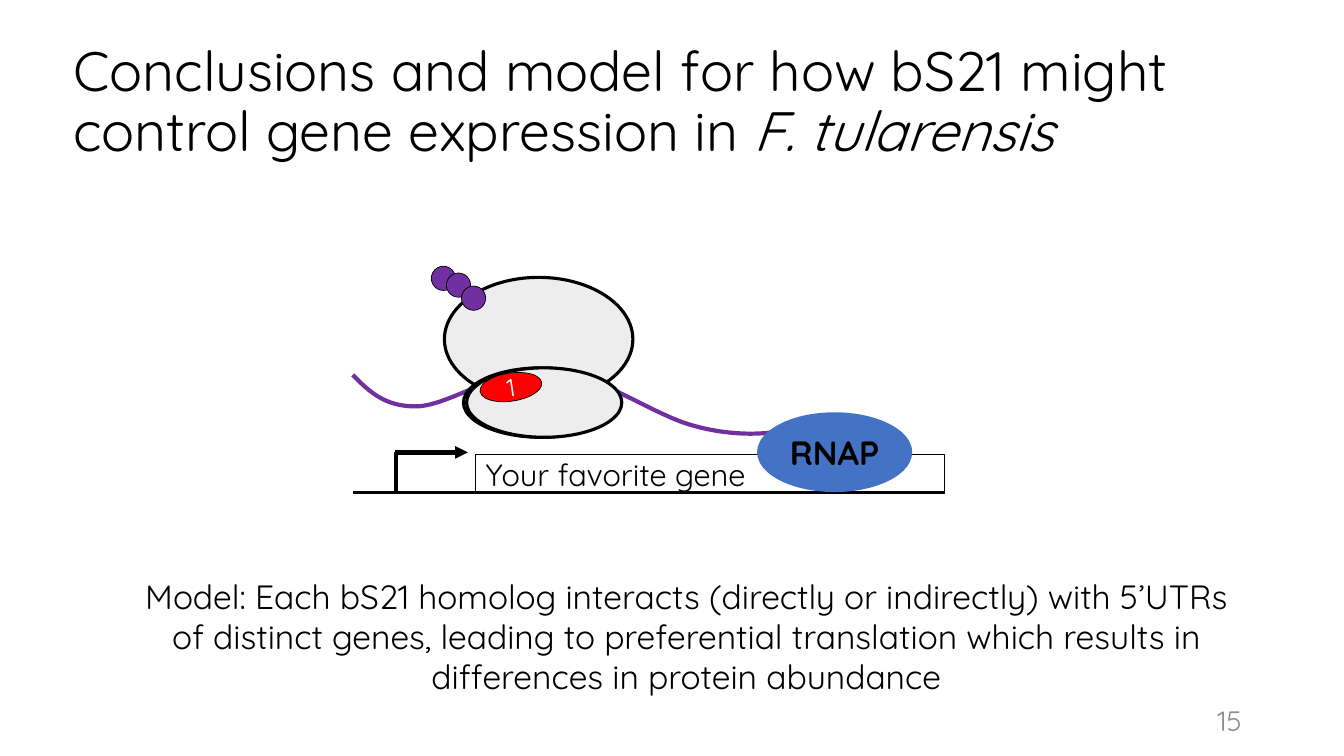
"""Build the slide showing a model of how bS21 might control gene expression."""
from dataclasses import dataclass
from typing import Optional

from lxml.etree import SubElement
from pptx import Presentation
from pptx.dml.color import RGBColor
from pptx.enum.shapes import MSO_CONNECTOR, MSO_SHAPE
from pptx.enum.text import MSO_ANCHOR, PP_ALIGN
from pptx.oxml.ns import qn
from pptx.util import Cm, Pt

FONT = "Quicksand"
BLACK = RGBColor(0x00, 0x00, 0x00)
WHITE = RGBColor(0xFF, 0xFF, 0xFF)
GREY = RGBColor(0x8C, 0x8C, 0x8C)
SUBUNIT_GREY = RGBColor(0xED, 0xED, 0xED)
PURPLE = RGBColor(0x70, 0x30, 0xA0)
BLUE = RGBColor(0x44, 0x72, 0xC4)
RED = RGBColor(0xFF, 0x00, 0x00)


@dataclass(frozen=True)
class Box:
    """Position and size in centimetres."""
    left: float
    top: float
    width: float
    height: float

    def lengths(self) -> tuple:
        """Return the four values as lengths."""
        return Cm(self.left), Cm(self.top), Cm(self.width), Cm(self.height)


@dataclass(frozen=True)
class Body:
    """A filled or outlined part of the diagram."""
    box: Box
    fill: Optional[RGBColor] = None
    line_width: float = 0
    kind: MSO_SHAPE = MSO_SHAPE.OVAL
    rotation: float = 0


@dataclass(frozen=True)
class Strand:
    """A straight black line, in centimetres."""
    start: tuple
    end: tuple
    width: float
    arrow: bool = False


@dataclass(frozen=True)
class Bend:
    """A cubic curve piece: two control points and its end, in centimetres."""
    first: tuple
    second: tuple
    end: tuple


GENE = Body(Box(11.99, 11.46, 11.81, 0.97), line_width=0.5, kind=MSO_SHAPE.RECTANGLE)
LARGE_SUBUNIT = Body(Box(11.2, 6.99, 4.75, 3.12), SUBUNIT_GREY, 2.25)
SMALL_SUBUNITS = [Body(Box(left, 9.27, 3.91, 1.75), SUBUNIT_GREY, 2.25)
                  for left in (11.68, 11.76)]
HOMOLOG = Body(Box(12.09, 9.4, 1.57, 0.71), RED, 0.5, rotation=351.6)
RNAP = Body(Box(19.08, 10.39, 3.91, 2.01), BLUE)
PEPTIDE = [Body(Box(left, top, 0.61, 0.61), PURPLE, 0.5)
           for left, top in ((10.87, 6.71), (11.25, 6.88), (11.63, 7.21))]
DNA = Strand((8.89, 12.42), (23.8, 12.42), 2.25)
PROMOTER = [Strand((9.98, 11.4), (9.98, 12.42), 3),
            Strand((9.96, 11.4), (11.79, 11.4), 3, arrow=True)]
MRNA_START = (8.89, 9.45)
MRNA_BENDS = [
    Bend((9.3, 9.86), (9.7, 10.26), (10.52, 10.24)),
    Bend((11.35, 10.21), (12.7, 9.22), (13.84, 9.3)),
    Bend((15.01, 9.4), (16.48, 10.46), (17.45, 10.72)),
    Bend((18.42, 11), (19.33, 10.95), (19.69, 10.85)),
]


def write(shape, text: str, *, size: float, color: RGBColor = BLACK, bold: bool = False,
          italic_tail: str = "", align: PP_ALIGN = PP_ALIGN.LEFT,
          anchor: MSO_ANCHOR = MSO_ANCHOR.MIDDLE, spacing: float = 1.0) -> None:
    """Write one paragraph, with an optional italic ending, into a shape."""
    frame = shape.text_frame
    frame.word_wrap = True
    frame.vertical_anchor = anchor
    paragraph = frame.paragraphs[0]
    paragraph.alignment = align
    paragraph.line_spacing = spacing
    for words, italic in ((text, False), (italic_tail, True)):
        if words:
            run = paragraph.add_run()
            run.text = words
            run.font.name = FONT
            run.font.size = Pt(size)
            run.font.bold = bold
            run.font.italic = italic
            run.font.color.rgb = color


def draw_body(shapes, body: Body):
    """Draw one body and return its shape."""
    shape = shapes.add_shape(body.kind, *body.box.lengths())
    shape.shadow.inherit = False
    shape.rotation = body.rotation
    if body.fill is None:
        shape.fill.background()
    else:
        shape.fill.solid()
        shape.fill.fore_color.rgb = body.fill
    if body.line_width:
        shape.line.color.rgb = BLACK
        shape.line.width = Pt(body.line_width)
    else:
        shape.line.fill.background()
    return shape


def draw_strand(shapes, strand: Strand) -> None:
    """Draw one straight line, with an arrowhead if it has one."""
    points = [Cm(value) for value in (*strand.start, *strand.end)]
    connector = shapes.add_connector(MSO_CONNECTOR.STRAIGHT, *points)
    connector.line.color.rgb = BLACK
    connector.line.width = Pt(strand.width)
    if strand.arrow:
        SubElement(connector.line._get_or_add_ln(), qn("a:tailEnd"), type="triangle")
    SubElement(connector._element.spPr, qn("a:effectLst"))


def draw_mrna(shapes) -> None:
    """Draw the transcript as one smooth open curve."""
    builder = shapes.build_freeform(*(Cm(value) for value in MRNA_START))
    builder.add_line_segments([tuple(Cm(value) for value in bend.end)
                               for bend in MRNA_BENDS], close=False)
    mrna = builder.convert_to_shape()
    mrna.shadow.inherit = False
    mrna.fill.background()
    mrna.line.color.rgb = PURPLE
    mrna.line.width = Pt(3)
    segments = list(mrna._element.iter(qn("a:lnTo")))
    for segment, bend in zip(segments, MRNA_BENDS):
        outline = segment.getparent()
        curve = SubElement(outline, qn("a:cubicBezTo"))
        for x, y in (bend.first, bend.second, bend.end):
            SubElement(curve, qn("a:pt"), x=str(Cm(x) - mrna.left), y=str(Cm(y) - mrna.top))
        outline.replace(segment, curve)


def main() -> None:
    """Build and save the slide."""
    deck = Presentation()
    deck.slide_width, deck.slide_height = Cm(33.87), Cm(19.05)
    shapes = deck.slides.add_slide(deck.slide_layouts[6]).shapes

    write(draw_body(shapes, GENE), "Your favorite gene", size=22)
    draw_mrna(shapes)
    title = shapes.add_textbox(*Box(1.6, 0.3, 31.65, 4.6).lengths())
    write(title, "Conclusions and model for how bS21 might control gene expression in ",
          italic_tail="F. tularensis", size=39.6, spacing=0.9)

    draw_body(shapes, LARGE_SUBUNIT)
    draw_strand(shapes, DNA)
    write(draw_body(shapes, RNAP), "RNAP", size=24, bold=True, align=PP_ALIGN.CENTER)
    for strand in PROMOTER:
        draw_strand(shapes, strand)

    small_subunit = shapes.add_group_shape().shapes
    for body in SMALL_SUBUNITS:
        draw_body(small_subunit, body)
    write(draw_body(small_subunit, HOMOLOG), "1", size=18, color=WHITE,
          align=PP_ALIGN.CENTER)
    peptide = shapes.add_group_shape().shapes
    for residue in PEPTIDE:
        draw_body(peptide, residue)

    model = shapes.add_textbox(*Box(3.07, 14.38, 28.45, 3.33).lengths())
    write(model, "Model: Each bS21 homolog interacts (directly or indirectly) with 5’UTRs "
          "of distinct genes, leading to preferential translation which results in "
          "differences in protein abundance", size=24, align=PP_ALIGN.CENTER,
          anchor=MSO_ANCHOR.TOP)
    page_number = shapes.add_textbox(*Box(23.93, 17.65, 7.62, 1.02).lengths())
    write(page_number, "15", size=20, color=GREY, align=PP_ALIGN.RIGHT)
    deck.save("out.pptx")


if __name__ == "__main__":
    main()
